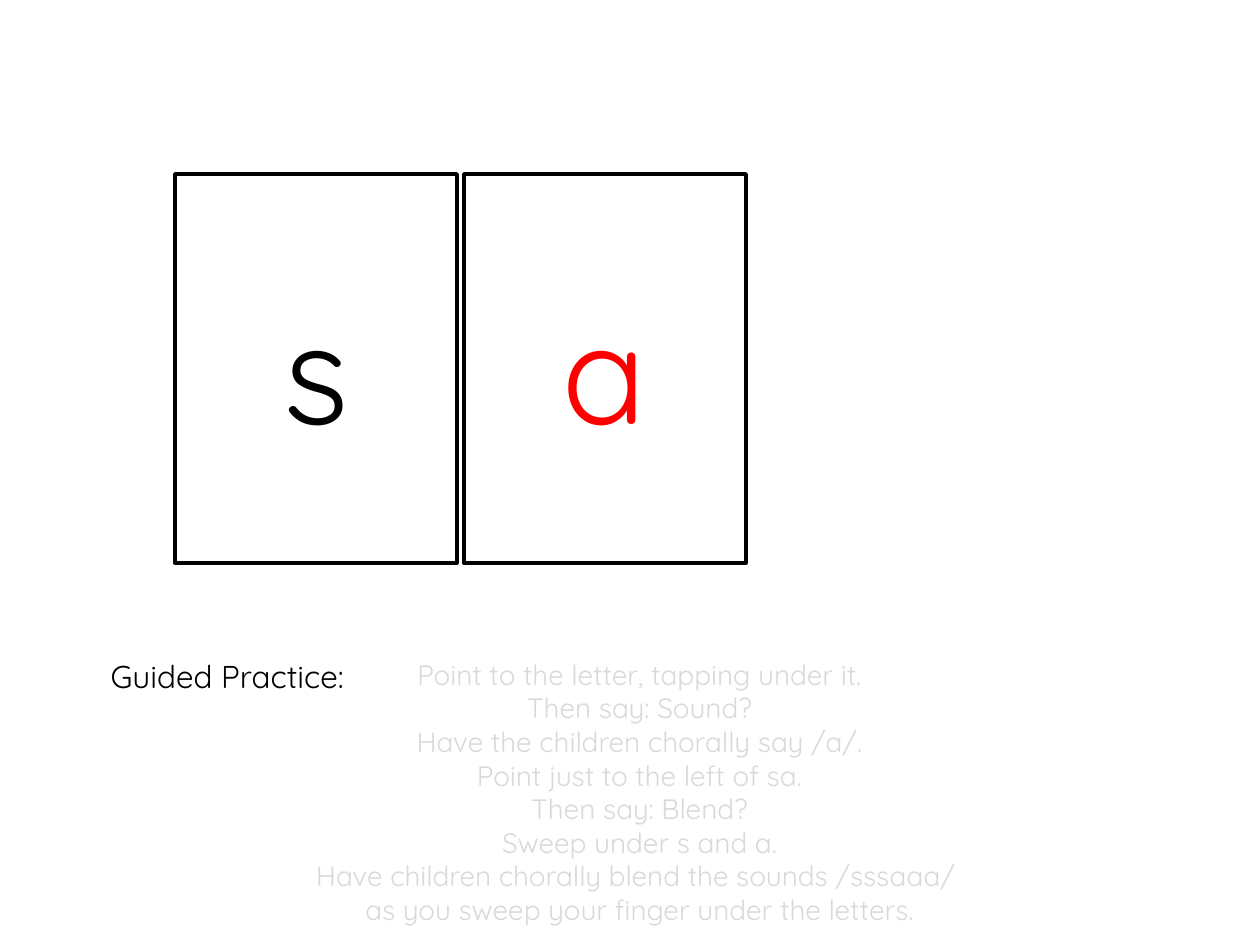
from dataclasses import dataclass

import pptx
import pptx.dml.color
import pptx.enum.shapes
import pptx.enum.text
import pptx.util

PX_PER_INCH = 126
FONT = "Quicksand"
BLACK, RED, WHITE, GRAY = "000000", "FF0000", "FFFFFF", "D9D9D9"
ALIGN = pptx.enum.text.PP_ALIGN
ANCHOR = pptx.enum.text.MSO_ANCHOR
CARD_LEFT, CARD_TOP, CARD_W, CARD_H, CARD_GAP = 175, 174, 282, 389, 7

INSTRUCTIONS = [
    "Point to the letter, tapping under it.",
    "Then say: Sound?",
    "Have the children chorally say /a/.",
    "Point just to the left of sa.",
    "Then say: Blend?",
    "Sweep under s and a.",
    "Have children chorally blend the sounds /sssaaa/ ",
    "as you sweep your finger under the letters.",
]


@dataclass
class LetterCard:
    letter: str
    color: str


CARDS = [LetterCard("s", BLACK), LetterCard("a", RED)]


def px(n: int) -> int:
    return round(n * pptx.util.Inches(1) / PX_PER_INCH)


def rgb(value: str) -> pptx.dml.color.RGBColor:
    return pptx.dml.color.RGBColor.from_string(value)


def place(sp, left: int, top: int, width: int, height: int) -> None:
    sp.left, sp.top, sp.width, sp.height = map(px, (left, top, width, height))


def write(sp, text: str, *, size: int, color: str,
          align=ALIGN.LEFT, anchor=ANCHOR.TOP) -> None:
    tf = sp.text_frame
    tf.text = text
    tf.word_wrap = True
    tf.auto_size = pptx.enum.text.MSO_AUTO_SIZE.NONE
    tf.vertical_anchor = anchor
    for p in tf.paragraphs:
        p.alignment = align
        p.space_before = pptx.util.Pt(0)
        pPr = p._p.get_or_add_pPr()
        pPr.set("marL", "0")
        pPr.set("indent", "0")
        pPr.append(pptx.oxml.parse_xml(
            '<a:buNone xmlns:a="http://schemas.openxmlformats.org/drawingml/2006/main"/>'))
        for r in p.runs:
            r.font.name = FONT
            r.font.size = pptx.util.Pt(size)
            r.font.color.rgb = rgb(color)


def draw_card(s, card: LetterCard, left: int) -> None:
    sp = s.shapes.add_shape(pptx.enum.shapes.MSO_SHAPE.RECTANGLE, 0, 0, 0, 0)
    place(sp, left, CARD_TOP, CARD_W, CARD_H)
    sp.shadow.inherit = False
    sp.fill.solid()
    sp.fill.fore_color.rgb = rgb(WHITE)
    sp.line.color.rgb = rgb(BLACK)
    sp.line.width = pptx.util.Pt(2)
    write(sp, card.letter, size=80, color=card.color,
          align=ALIGN.CENTER, anchor=ANCHOR.MIDDLE)


def main() -> None:
    prs = pptx.Presentation()
    prs.slide_width, prs.slide_height = px(1260), px(945)
    s = prs.slides.add_slide(prs.slide_layouts[1])

    title, body = s.placeholders
    place(title, 98, 651, 297, 50)
    write(title, "Guided Practice:", size=18, color=BLACK)
    place(body, 19, 651, 1241, 285)
    write(body, "\n".join(INSTRUCTIONS), size=16, color=GRAY, align=ALIGN.CENTER)

    for i, card in enumerate(CARDS):
        draw_card(s, card, CARD_LEFT + i * (CARD_W + CARD_GAP))

    prs.save("out.pptx")


if __name__ == "__main__":
    main()
